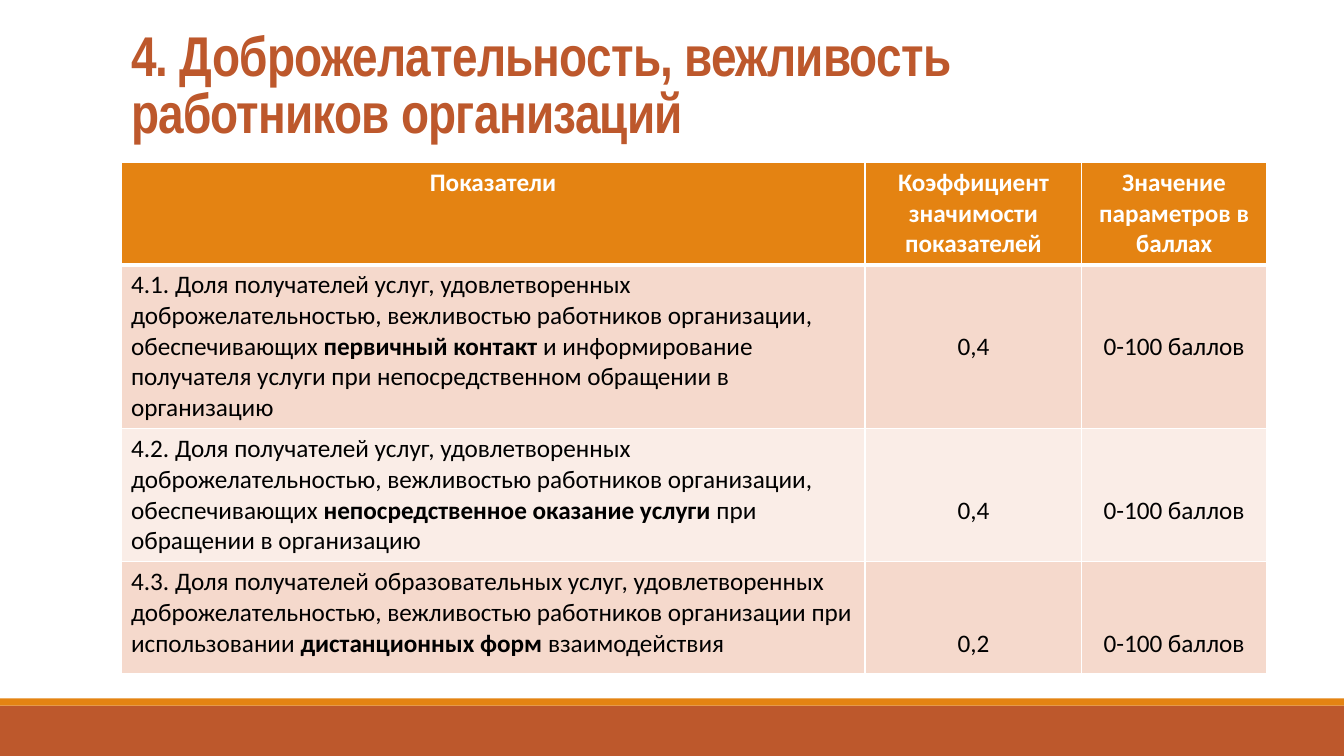
from lxml import etree
from pptx import Presentation
from pptx.dml.color import RGBColor
from pptx.enum.shapes import MSO_SHAPE
from pptx.enum.text import MSO_ANCHOR, MSO_AUTO_SIZE, PP_ALIGN
from pptx.oxml.ns import qn
from pptx.util import Inches, Pt

RUST = RGBColor(0xBD, 0x58, 0x2C)
ORANGE = RGBColor(0xE4, 0x83, 0x12)
ROSE = RGBColor(0xF5, 0xD9, 0xCC)
PALE_ROSE = RGBColor(0xFA, 0xED, 0xE7)
WHITE = RGBColor(0xFF, 0xFF, 0xFF)
BLACK = RGBColor(0, 0, 0)

COLUMN_WIDTHS = [7.38, 2.15, 1.83]
ROW_HEIGHTS = [0.96, 1.54, 1.25, 1.11]
HEADERS = ["Показатели", "Коэффициент значимости показателей",
           "Значение параметров в баллах"]
SCORE_RANGE = "0-100 баллов"
INDICATORS = [
    (["4.1. Доля получателей услуг, удовлетворенных доброжелательностью, "
      "вежливостью работников организации, обеспечивающих ",
      "первичный контакт ",
      "и информирование получателя услуги при непосредственном обращении "
      "в организацию"], "0,4"),
    (["4.2. Доля получателей услуг, удовлетворенных доброжелательностью, "
      "вежливостью работников организации, обеспечивающих ",
      "непосредственное оказание услуги ",
      "при обращении в организацию"], "0,4"),
    (["4.3. Доля получателей образовательных услуг, удовлетворенных "
      "доброжелательностью, вежливостью работников организации при "
      "использовании ",
      "дистанционных форм ",
      "взаимодействия"], "0,2"),
]


def add_band(slide, width, top, height, color):
    band = slide.shapes.add_shape(MSO_SHAPE.RECTANGLE, 0, Inches(top),
                                  width, Inches(height))
    band.shadow.inherit = False
    band.fill.solid()
    band.fill.fore_color.rgb = color
    band.line.fill.background()


def set_title(slide, text):
    title = slide.shapes.title
    title.left, title.top = Inches(1.2), Inches(0.25)
    title.width, title.height = Inches(11.47), Inches(1.24)
    frame = title.text_frame
    frame.word_wrap = True
    frame.auto_size = MSO_AUTO_SIZE.NONE
    frame.vertical_anchor = MSO_ANCHOR.BOTTOM
    frame.text = text
    para = frame.paragraphs[0]
    para.alignment = PP_ALIGN.LEFT
    para.line_spacing = 0.85
    set_font(para.font, "Arial Narrow", 40, RUST, True)
    for span in para.runs:
        span.font._element.set("spc", "-50")


def set_font(font, name, size, color, bold):
    font.name, font.size, font.bold = name, Pt(size), bold
    font.color.rgb = color


def set_borders(cell, top, bottom):
    properties = cell._tc.get_or_add_tcPr()
    widths = {"a:lnL": 1, "a:lnR": 1, "a:lnT": top, "a:lnB": bottom}
    for position, (tag, width) in enumerate(widths.items()):
        line = etree.Element(qn(tag), w=str(Pt(width)))
        fill = etree.SubElement(line, qn("a:solidFill"))
        etree.SubElement(fill, qn("a:srgbClr"), val=str(WHITE))
        properties.insert(position, line)


def fill_cell(cell, spans, fill, color, bold=False, centered=True):
    cell.fill.solid()
    cell.fill.fore_color.rgb = fill
    para = cell.text_frame.paragraphs[0]
    para.alignment = PP_ALIGN.CENTER if centered else PP_ALIGN.LEFT
    set_font(para.font, "Calibri", 18, color, bold)
    for number, text in enumerate(spans):
        span = para.add_run()
        span.text = text
        if number == 1:
            span.font.bold = True


def add_indicator_table(slide):
    table = slide.shapes.add_table(
        len(ROW_HEIGHTS), len(COLUMN_WIDTHS), Inches(1.2), Inches(1.61),
        Inches(sum(COLUMN_WIDTHS)), Inches(sum(ROW_HEIGHTS))).table
    for column, width in zip(table.columns, COLUMN_WIDTHS):
        column.width = Inches(width)
    for row, height in zip(table.rows, ROW_HEIGHTS):
        row.height = Inches(height)

    for cell, header in zip(table.rows[0].cells, HEADERS):
        fill_cell(cell, [header], ORANGE, WHITE, bold=True)
        set_borders(cell, 1, 3)

    for number, (description, weight) in enumerate(INDICATORS, 1):
        fill = ROSE if number % 2 else PALE_ROSE
        cells = list(table.rows[number].cells)
        fill_cell(cells[0], description, fill, BLACK, centered=False)
        for cell, value in zip(cells[1:], [weight, SCORE_RANGE]):
            fill_cell(cell, [value], fill, BLACK)
            cell.margin_top = Inches(0.66)
        for cell in cells:
            set_borders(cell, 3 if number == 1 else 1, 1)


def main():
    deck = Presentation()
    deck.slide_width, deck.slide_height = Inches(13.33), Inches(7.5)
    slide = deck.slides.add_slide(deck.slide_layouts[5])
    add_band(slide, deck.slide_width, 7, 0.5, RUST)
    add_band(slide, deck.slide_width, 6.93, 0.07, ORANGE)
    set_title(slide, "4. Доброжелательность, вежливость\vработников организаций")
    add_indicator_table(slide)
    deck.save("out.pptx")


if __name__ == "__main__":
    main()
